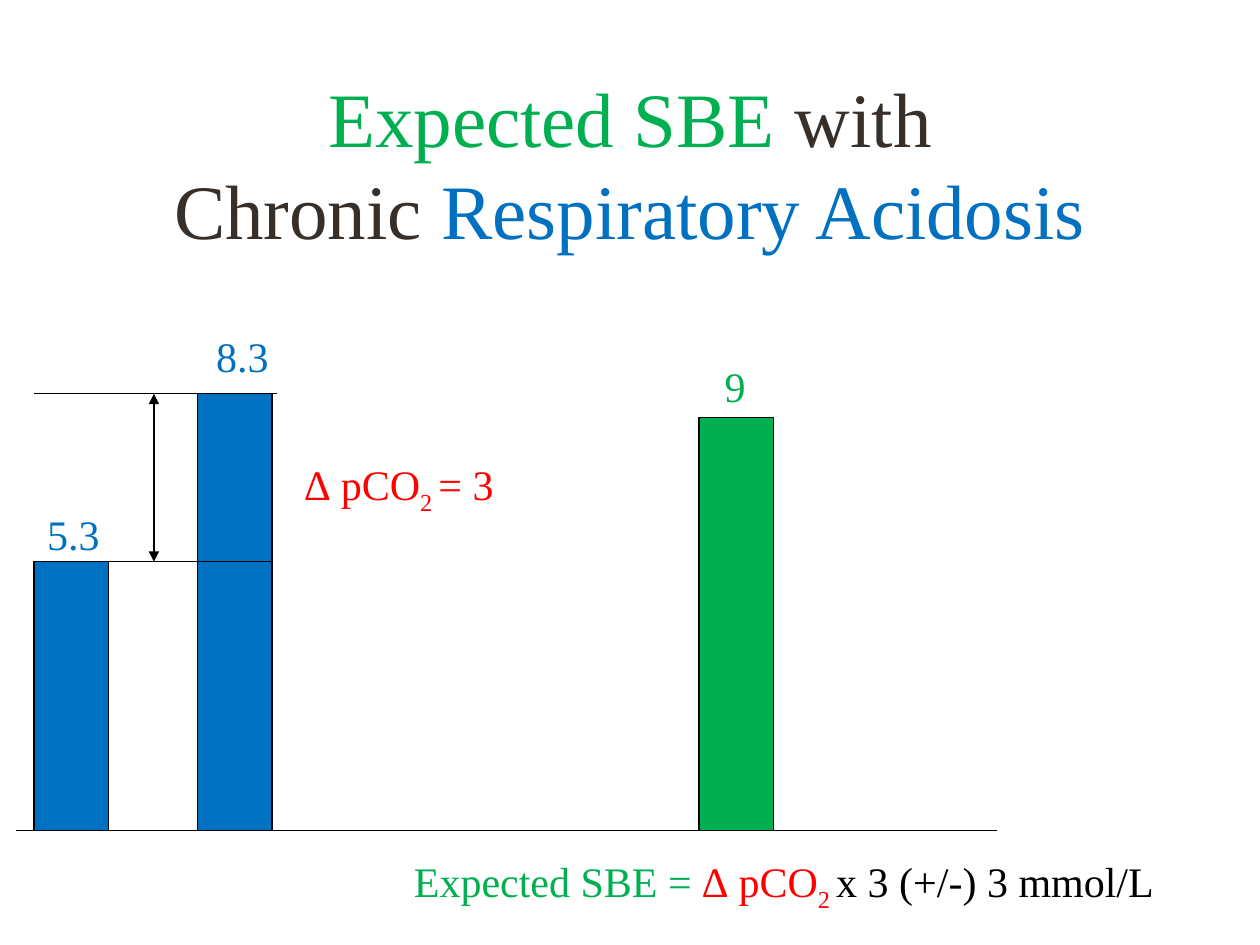
from collections import namedtuple
from dataclasses import dataclass

from lxml import etree
from pptx import Presentation
from pptx.dml.color import RGBColor
from pptx.enum import shapes, text
from pptx.oxml import ns
from pptx.util import Pt

Box = namedtuple("Box", "left top width height")
Bar = namedtuple("Bar", "value left height color label_center label_rise")


@dataclass(frozen=True)
class Theme:
    """Fonts, type sizes and colours of the slide."""
    font: str = "Times New Roman"
    title_size: float = 44
    title_spacing: float = 52.5
    body_size: float = 24
    line_width: float = 0.75
    blue: str = "0070C0"
    green: str = "00B050"
    red: str = "FF0000"
    black: str = "000000"
    dark: str = "37302A"


THEME = Theme()
DELTA = [("∆ pCO", THEME.red, False), ("2 ", THEME.red, True)]


def place(box):
    """Return the box as four lengths in points."""
    return [Pt(length) for length in box]


def add_span(para, words, color, subscript=False):
    """Append one coloured run to a paragraph."""
    span = para.add_run()
    span.text = words
    span.font.color.rgb = RGBColor.from_string(color)
    if subscript:
        span._r.get_or_add_rPr().set("baseline", "-25000")


def add_label(page, box, spans, align=text.PP_ALIGN.LEFT, wrap=False):
    """Add a text box holding one line of coloured runs."""
    frame = page.shapes.add_textbox(*place(box)).text_frame
    frame.word_wrap = wrap
    frame.auto_size = text.MSO_AUTO_SIZE.SHAPE_TO_FIT_TEXT
    para = frame.paragraphs[0]
    para.alignment = align
    para.font.name = THEME.font
    para.font.size = Pt(THEME.body_size)
    for span in spans:
        add_span(para, *span)


def add_line(page, start, end, arrows=False):
    """Add a thin black line, with arrowheads at both ends if asked."""
    line = page.shapes.add_connector(
        shapes.MSO_CONNECTOR.STRAIGHT, *place(start + end))
    line.line.color.rgb = RGBColor.from_string(THEME.black)
    line.line.width = Pt(THEME.line_width)
    properties = line._element.spPr
    if arrows:
        outline = properties.find(ns.qn("a:ln"))
        for tip in ("a:headEnd", "a:tailEnd"):
            etree.SubElement(outline, ns.qn(tip), type="triangle")
    etree.SubElement(properties, ns.qn("a:effectLst"))


def add_bar(page, box, bar):
    """Add one bar standing on the bottom of the box, and its value."""
    left, top = box.left + bar.left, box.top + box.height - bar.height
    column = page.shapes.add_shape(
        shapes.MSO_SHAPE.RECTANGLE, *place((left, top, 42.5, bar.height)))
    column.shadow.inherit = False
    column.fill.solid()
    column.fill.fore_color.rgb = RGBColor.from_string(bar.color)
    column.line.color.rgb = RGBColor.from_string(THEME.black)
    column.line.width = Pt(THEME.line_width)
    width = 45
    add_label(page, Box(box.left + bar.label_center - width / 2,
                        top - bar.label_rise, width, 36.5),
              [(bar.value, bar.color)], text.PP_ALIGN.CENTER)


def fill_title(page, box):
    """Place and format the two-line title."""
    title = page.shapes.title
    title.left, title.top, title.width, title.height = place(box)
    title.text_frame.vertical_anchor = text.MSO_ANCHOR.MIDDLE
    para = title.text_frame.paragraphs[0]
    para.alignment = text.PP_ALIGN.CENTER
    para.line_spacing = Pt(THEME.title_spacing)
    para.font.name = THEME.font
    para.font.size = Pt(THEME.title_size)
    add_span(para, "Expected SBE ", THEME.green)
    add_span(para, "with", THEME.dark)
    para.add_line_break()
    add_span(para, "Chronic ", THEME.dark)
    add_span(para, "Respiratory Acidosis", THEME.blue)


def draw_bars(page, box):
    """Draw the bars, the baseline and the marked pCO2 difference."""
    normal = Bar("5.3", 10.5, 153.5, THEME.blue, 33, 34)
    raised = Bar("8.3", 104, 249.5, THEME.blue, 129.5, 39.5)
    expected = Bar("9", 390.5, 236, THEME.green, 411, 36)
    bottom = box.top + box.height
    low, high = bottom - normal.height, bottom - raised.height
    left = box.left + normal.left
    add_line(page, (box.left, bottom), (box.left + box.width, bottom))
    for bar in (normal, raised, expected):
        add_bar(page, box, bar)
    add_line(page, (left, low), (left + 136, low))
    add_line(page, (left, high), (left + 139, high))
    add_line(page, (left + 68.5, low), (left + 68.5, high), arrows=True)
    add_label(page, Box(box.left + 158, high + 33.5, 125.5, 36.5),
              DELTA + [("= 3", THEME.red)])


def write_formula(page, box):
    """Write the rule for the expected SBE."""
    add_label(page, box, [("Expected SBE = ", THEME.green)] + DELTA
              + [("x 3 (+/-) 3 mmol/L", THEME.black)], wrap=True)


def main():
    """Build and save the slide."""
    deck = Presentation()
    deck.slide_width, deck.slide_height = Pt(720), Pt(540)
    page = deck.slides.add_slide(deck.slide_layouts[5])
    fill_title(page, Box(0, 48, 720, 90))
    draw_bars(page, Box(9, 185, 560.5, 289.5))
    write_formula(page, Box(229.5, 485.5, 448, 36))
    deck.save("out.pptx")


if __name__ == "__main__":
    main()
